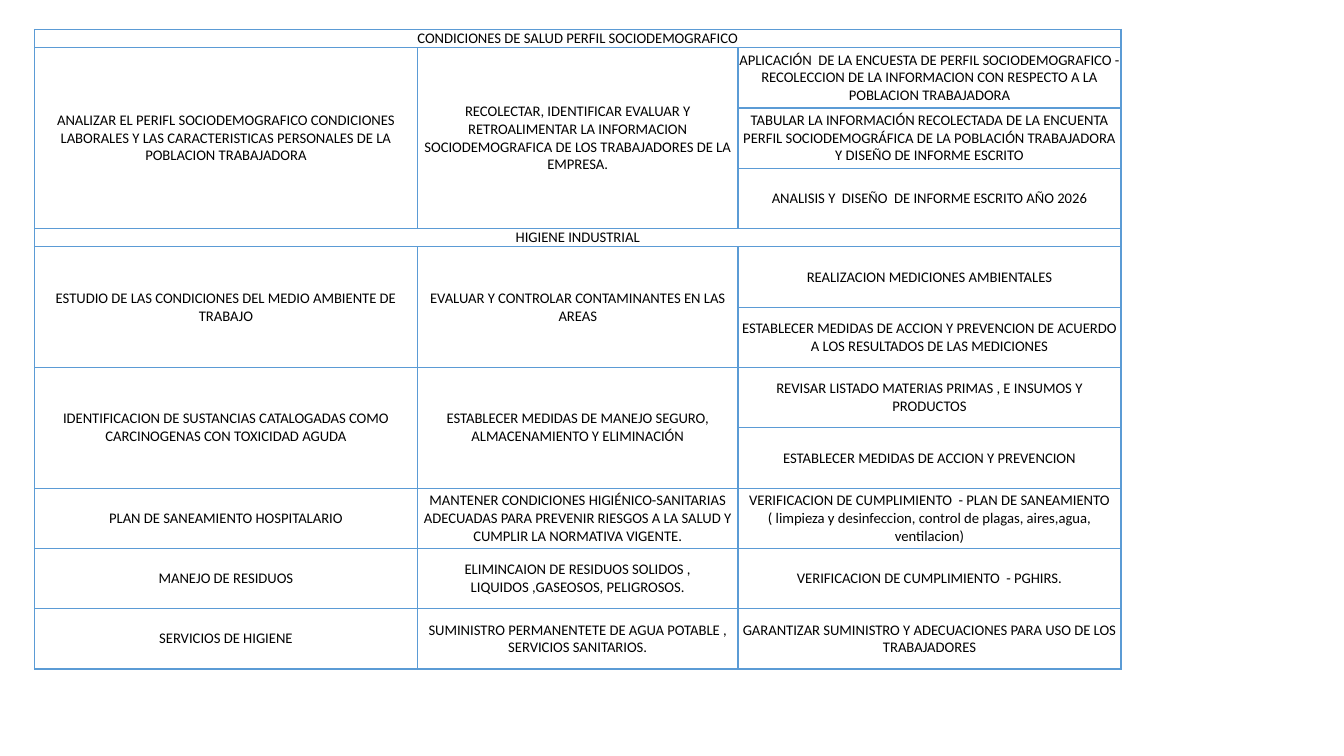
from lxml import etree
from pptx import Presentation
from pptx.dml.color import RGBColor
from pptx.enum import text
from pptx.oxml import ns
from pptx.util import Cm, Pt

BLACK = RGBColor(0x00, 0x00, 0x00)
BLUE = RGBColor(0x5B, 0x9B, 0xD5)
WIDTHS = [Cm(9.65), Cm(8.08), Cm(9.65)]
BAND, ROW = Cm(0.46), Cm(1.52)

# Each section holds its title and its topics: (topic, goal, actions)
PLAN = [
    ("CONDICIONES DE SALUD PERFIL SOCIODEMOGRAFICO", [
        ("ANALIZAR EL PERIFL SOCIODEMOGRAFICO CONDICIONES LABORALES Y LAS "
         "CARACTERISTICAS PERSONALES DE LA POBLACION TRABAJADORA",
         "RECOLECTAR, IDENTIFICAR EVALUAR Y RETROALIMENTAR LA INFORMACION "
         "SOCIODEMOGRAFICA DE LOS TRABAJADORES DE LA EMPRESA.",
         ["APLICACIÓN  DE LA ENCUESTA DE PERFIL SOCIODEMOGRAFICO - RECOLECCION "
          "DE LA INFORMACION CON RESPECTO A LA POBLACION TRABAJADORA",
          "TABULAR LA INFORMACIÓN RECOLECTADA DE LA ENCUENTA PERFIL "
          "SOCIODEMOGRÁFICA DE LA POBLACIÓN TRABAJADORA Y DISEÑO DE INFORME ESCRITO",
          "ANALISIS Y  DISEÑO  DE INFORME ESCRITO AÑO 2026"]),
    ]),
    ("HIGIENE INDUSTRIAL", [
        ("ESTUDIO DE LAS CONDICIONES DEL MEDIO AMBIENTE DE TRABAJO",
         "EVALUAR Y CONTROLAR CONTAMINANTES EN LAS AREAS",
         ["REALIZACION MEDICIONES AMBIENTALES",
          "ESTABLECER MEDIDAS DE ACCION Y PREVENCION DE ACUERDO A LOS "
          "RESULTADOS DE LAS MEDICIONES"]),
        ("IDENTIFICACION DE SUSTANCIAS CATALOGADAS COMO CARCINOGENAS CON "
         "TOXICIDAD AGUDA",
         "ESTABLECER MEDIDAS DE MANEJO SEGURO, ALMACENAMIENTO Y ELIMINACIÓN",
         ["REVISAR LISTADO MATERIAS PRIMAS , E INSUMOS Y PRODUCTOS",
          "ESTABLECER MEDIDAS DE ACCION Y PREVENCION"]),
        ("PLAN DE SANEAMIENTO HOSPITALARIO",
         "MANTENER CONDICIONES HIGIÉNICO-SANITARIAS ADECUADAS PARA PREVENIR "
         "RIESGOS A LA SALUD Y CUMPLIR LA NORMATIVA VIGENTE.",
         ["VERIFICACION DE CUMPLIMIENTO  - PLAN DE SANEAMIENTO ( limpieza y "
          "desinfeccion, control de plagas, aires,agua, ventilacion)"]),
        ("MANEJO DE RESIDUOS",
         "ELIMINCAION DE RESIDUOS SOLIDOS , LIQUIDOS ,GASEOSOS, PELIGROSOS.",
         ["VERIFICACION DE CUMPLIMIENTO  - PGHIRS."]),
        ("SERVICIOS DE HIGIENE",
         "SUMINISTRO PERMANENTETE DE AGUA POTABLE , SERVICIOS SANITARIOS.",
         ["GARANTIZAR SUMINISTRO Y ADECUACIONES PARA USO DE LOS TRABAJADORES"]),
    ]),
]


def style(cell):
    """Give a cell thin blue borders, no fill, no margins and centred text."""
    props = cell._tc.get_or_add_tcPr()
    for side in ("lnL", "lnR", "lnT", "lnB"):
        line = etree.SubElement(props, ns.qn("a:" + side), w=str(Pt(1)))
        fill = etree.SubElement(line, ns.qn("a:solidFill"))
        etree.SubElement(fill, ns.qn("a:srgbClr"), val=str(BLUE))
    cell.fill.background()
    cell.margin_left = cell.margin_right = cell.margin_top = cell.margin_bottom = 0
    cell.vertical_anchor = text.MSO_ANCHOR.MIDDLE
    para = cell.text_frame.paragraphs[0]
    para.alignment = text.PP_ALIGN.CENTER
    para.font.name = "Calibri"
    para.font.size = Pt(10.5)
    para.font.color.rgb = BLACK


deck = Presentation()
deck.slide_width, deck.slide_height = Cm(33.87), Cm(19.05)
slide = deck.slides.add_slide(deck.slide_layouts[6])

tasks = sum(len(acts) for _, topics in PLAN for _, _, acts in topics)
count = len(PLAN) + tasks
table = slide.shapes.add_table(
    count, len(WIDTHS), Cm(0.87), Cm(0.74),
    sum(WIDTHS), len(PLAN) * BAND + tasks * ROW).table
table.first_row = table.horz_banding = False
for col, width in zip(table.columns, WIDTHS):
    col.width = width
for row in table.rows:
    row.height = ROW

top = 0
for title, topics in PLAN:
    table.rows[top].height = BAND
    table.cell(top, 0).text = title
    table.cell(top, 0).merge(table.cell(top, 2))
    top += 1
    for topic, goal, acts in topics:
        last = top + len(acts) - 1
        for col, words in enumerate((topic, goal)):
            table.cell(top, col).text = words
            if last > top:
                table.cell(top, col).merge(table.cell(last, col))
        for step, act in enumerate(acts):
            table.cell(top + step, 2).text = act
        top = last + 1

for cell in table.iter_cells():
    style(cell)

deck.save("out.pptx")
